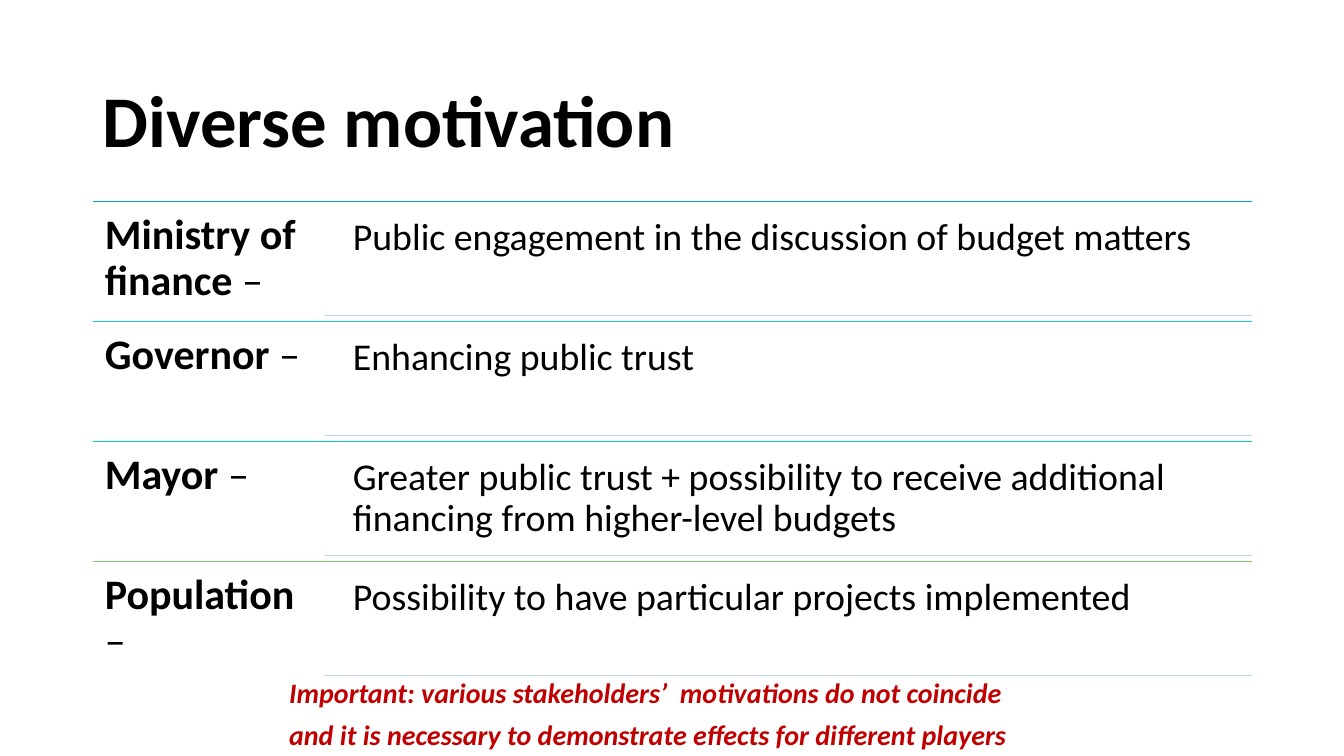
"""Build the slide on the diverse motivation of budget stakeholders."""
from dataclasses import dataclass

from lxml import etree
from pptx import Presentation
from pptx.dml.color import RGBColor
from pptx.enum.shapes import MSO_CONNECTOR
from pptx.enum.text import MSO_ANCHOR, MSO_AUTO_SIZE, PP_ALIGN
from pptx.oxml.ns import qn
from pptx.slide import Slide
from pptx.text.text import TextFrame, _Paragraph
from pptx.util import Inches, Pt

STRAIGHT = MSO_CONNECTOR.STRAIGHT
TOP, MIDDLE = MSO_ANCHOR.TOP, MSO_ANCHOR.MIDDLE
FIXED = MSO_AUTO_SIZE.NONE
GROW = MSO_AUTO_SIZE.SHAPE_TO_FIT_TEXT
LEFT = PP_ALIGN.LEFT

BLACK = RGBColor(0x00, 0x00, 0x00)
RED = RGBColor(0xC0, 0x00, 0x00)
PALE = RGBColor(0xBD, 0xD5, 0xED)
BLUE = RGBColor(0x00, 0x9D, 0xD9)
CYAN = RGBColor(0x0B, 0xD0, 0xD9)
TEAL = RGBColor(0x10, 0xCF, 0x9B)
GREEN = RGBColor(0x7C, 0xCA, 0x62)

FONT = "Calibri"
WIDE, HIGH = 13.33, 7.5
EDGE, SPAN = 0.92, 11.5
END = EDGE + SPAN
FIRST, STEP = 2.0, 1.19
COL = SPAN / 5
INDENT, DROP, DEEP = 0.17, 0.05, 1.08


@dataclass(frozen=True)
class Player:
    """A stakeholder, its motive and the colour of its rule."""
    name: str
    motive: str
    color: RGBColor


@dataclass(frozen=True)
class Style:
    """The look of a run of text."""
    size: int
    color: RGBColor = BLACK
    bold: bool = False
    slant: bool = False


HEAD = Style(52, bold=True)
NAME = Style(30, bold=True)
DASH = Style(30)
BODY = Style(27)
ALERT = Style(20, RED, True, True)

PLAYERS = (
    Player("Ministry of finance ",
           "Public engagement in the discussion of budget matters", BLUE),
    Player("Governor ", "Enhancing public trust", CYAN),
    Player("Mayor ", "Greater public trust + possibility to receive additional "
           "financing from higher-level budgets", TEAL),
    Player("Population ",
           "Possibility to have particular projects implemented", GREEN),
)
NOTE = (
    "Important: various stakeholders’  motivations do not coincide",
    "and it is necessary to demonstrate effects for different players",
)


def add_run(para: _Paragraph, text: str, style: Style) -> None:
    """Append one styled run to a paragraph."""
    run = para.add_run()
    run.text = text
    font = run.font
    font.name, font.size = FONT, Pt(style.size)
    font.bold, font.italic = style.bold, style.slant
    font.color.rgb = style.color


def add_rule(slide: Slide, left: float, top: float, color: RGBColor) -> None:
    """Draw a thin rule from a left edge to the right edge of the grid."""
    rule = slide.shapes.add_connector(
        STRAIGHT, Inches(left), Inches(top), Inches(END), Inches(top))
    rule.line.color.rgb = color
    rule.line.width = Pt(1)
    etree.SubElement(rule._element.spPr, qn("a:effectLst"))


def add_box(slide: Slide, left: float, top: float, width: float,
            height: float, inset: float) -> TextFrame:
    """Add a wrapping text box with equal insets."""
    box = slide.shapes.add_textbox(
        Inches(left), Inches(top), Inches(width), Inches(height))
    frame = box.text_frame
    frame.word_wrap, frame.auto_size = True, FIXED
    frame.vertical_anchor = TOP
    frame.margin_left = frame.margin_right = Inches(inset)
    frame.margin_top = frame.margin_bottom = Inches(inset)
    frame.paragraphs[0].line_spacing = 0.9
    return frame


def add_title(slide: Slide) -> None:
    """Place and format the title."""
    title = slide.shapes.title
    title.left, title.top = Inches(EDGE), Inches(0.61)
    title.width, title.height = Inches(SPAN), Inches(1.24)
    frame = title.text_frame
    frame.auto_size, frame.vertical_anchor = FIXED, MIDDLE
    para = frame.paragraphs[0]
    para.alignment, para.line_spacing = LEFT, 0.9
    add_run(para, "Diverse motivation", HEAD)


def add_note(slide: Slide) -> None:
    """Add the closing remark."""
    box = slide.shapes.add_textbox(
        Inches(2.77), Inches(6.65), Inches(7.44), Inches(0.86))
    frame = box.text_frame
    frame.word_wrap, frame.auto_size = False, GROW
    for row, text in enumerate(NOTE):
        para = frame.add_paragraph() if row else frame.paragraphs[0]
        para.space_after = Pt(6)
        add_run(para, text, ALERT)


def add_player(slide: Slide, row: int, player: Player) -> None:
    """Draw one row of the grid: rules, name and motive."""
    top = FIRST + row * STEP
    split = EDGE + COL
    add_rule(slide, EDGE, top, player.color)
    para = add_box(slide, EDGE, top, COL, STEP, 0.12).paragraphs[0]
    add_run(para, player.name, NAME)
    add_run(para, "–", DASH)
    left = split + INDENT
    frame = add_box(slide, left, top + DROP, END - left, DEEP, 0.11)
    add_run(frame.paragraphs[0], player.motive, BODY)
    add_rule(slide, split, top + DROP + DEEP, PALE)


def main() -> None:
    """Build and save the deck."""
    deck = Presentation()
    deck.slide_width, deck.slide_height = Inches(WIDE), Inches(HIGH)
    slide = deck.slides.add_slide(deck.slide_layouts.get_by_name("Title Only"))
    add_title(slide)
    add_note(slide)
    for row, player in enumerate(PLAYERS):
        add_player(slide, row, player)
    deck.save("out.pptx")


if __name__ == "__main__":
    main()
